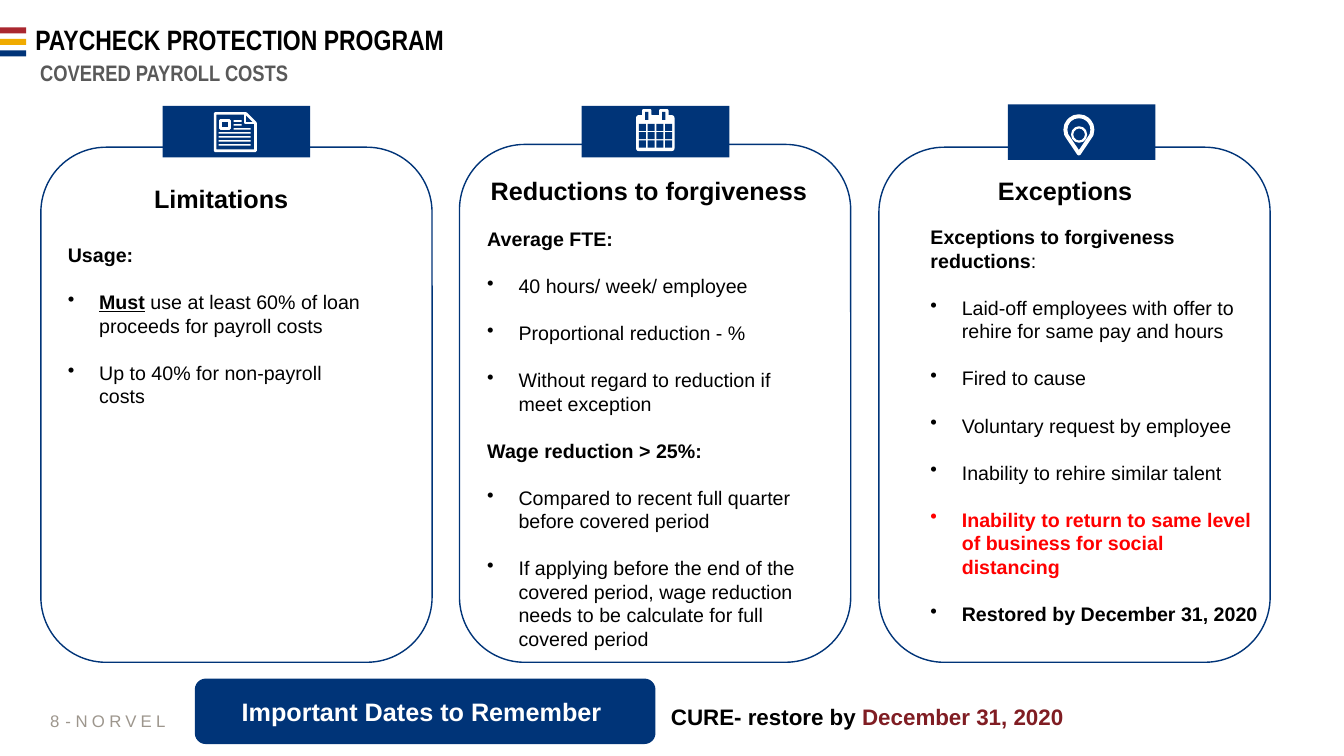
import dataclasses
import math

import pptx
import pptx.dml.color
import pptx.enum.shapes
import pptx.enum.text
import pptx.util
from lxml import etree

Cm = pptx.util.Cm
Pt = pptx.util.Pt
Shape = pptx.enum.shapes.MSO_SHAPE
Align = pptx.enum.text.PP_ALIGN
Anchor = pptx.enum.text.MSO_ANCHOR
RGB = pptx.dml.color.RGBColor.from_string


@dataclasses.dataclass(frozen=True)
class Theme:
    navy: str = "003478"
    red: str = "AA272F"
    gold: str = "F0AB00"
    white: str = "FFFFFF"
    black: str = "000000"
    gray: str = "595959"
    footer: str = "9D968D"
    alert: str = "FF0000"
    maroon: str = "801D23"
    sans: str = "Arial"
    narrow: str = "Arial Narrow"
    title: float = 20
    heading: float = 18
    subtitle: float = 16
    body: float = 14
    small: float = 12
    body_line: float = 16.8


theme = Theme()
deck = pptx.Presentation()
deck.slide_width, deck.slide_height = Cm(33.87), Cm(19.05)
page = deck.slides.add_slide(deck.slide_layouts[6])


def draw(kind, left, top, width, height, fill=None, line=None, weight=1):
    shape = page.shapes.add_shape(kind, Cm(left), Cm(top), Cm(width), Cm(height))
    shape.shadow.inherit = False
    if fill:
        shape.fill.solid()
        shape.fill.fore_color.rgb = RGB(fill)
    else:
        shape.fill.background()
    if line:
        shape.line.color.rgb = RGB(line)
        shape.line.width = Pt(weight)
    else:
        shape.line.fill.background()
    return shape


def write(paragraph, spans, size, color=theme.black, bold=True, name=theme.sans, align=Align.LEFT):
    paragraph.alignment = align
    paragraph.font.name = name
    paragraph.font.size = Pt(size)
    paragraph.font.bold = bold
    paragraph.font.color.rgb = RGB(color)
    for text, style in spans:
        span = paragraph.add_run()
        span.text = text
        for key, value in style.items():
            if key == "color":
                span.font.color.rgb = RGB(value)
            elif key == "spacing":
                span.font._element.set("spc", str(value * 100))
            else:
                setattr(span.font, key, value)


for index, color in enumerate((theme.red, theme.gold, theme.navy)):
    draw(Shape.RECTANGLE, 0, 0.69 + 0.29 * index, 0.66, 0.15, color)

for left, top, height in ((1.03, 3.71, 12.98), (11.58, 3.64, 13.05), (22.15, 3.71, 12.98)):
    draw(Shape.ROUNDED_RECTANGLE, left, top, 9.86, height, line=theme.navy)
for left, top, height in ((4.1, 2.67, 1.3), (14.66, 2.67, 1.3), (25.4, 2.63, 1.4)):
    draw(Shape.RECTANGLE, left, top, 3.72, height, theme.navy)

draw(Shape.ROUNDED_RECTANGLE, 16.03, 2.9, 0.97, 0.91, theme.white).adjustments[0] = 0.08
for row in range(3):
    for column in range(4):
        draw(Shape.RECTANGLE, 16.1 + 0.22 * column, 3.12 + 0.21 * row, 0.18, 0.18, theme.navy)
for left in (16.18, 16.61):
    draw(Shape.ROUNDED_RECTANGLE, left, 2.75, 0.24, 0.33, theme.white)
    draw(Shape.RECTANGLE, left + 0.08, 2.82, 0.08, 0.2, theme.navy)

pin_x, pin_y, pin_radius = 27.19, 3.27, 0.34
pin = [(pin_x, 3.87)]
for degrees in range(150, 391, 10):
    angle = math.radians(degrees)
    pin.append((pin_x + pin_radius * math.cos(angle), pin_y + pin_radius * math.sin(angle)))
outlines = (
    (pin, True, 2.8),
    ([(5.42, 2.86), (6.2, 2.86), (6.44, 3.1), (6.44, 3.8), (5.42, 3.8)], True, 1.8),
    ([(6.17, 2.86), (6.17, 3.1), (6.44, 3.1)], False, 1.5),
)
for points, closed, weight in outlines:
    steps = [(round(x * 100), round(y * 100)) for x, y in points]
    builder = page.shapes.build_freeform(*steps[0], scale=Cm(0.01))
    builder.add_line_segments(steps[1:], close=closed)
    outline = builder.convert_to_shape()
    outline.shadow.inherit = False
    outline.fill.background()
    outline.line.color.rgb = RGB(theme.white)
    outline.line.width = Pt(weight)
draw(Shape.OVAL, 27.02, 3.21, 0.35, 0.36, line=theme.white, weight=1.6)

draw(Shape.RECTANGLE, 5.55, 3.03, 0.23, 0.21, line=theme.white, weight=2)
for left, top, width in ((5.89, 3.03, 0.2), (5.89, 3.13, 0.2), (5.89, 3.23, 0.43)):
    draw(Shape.RECTANGLE, left, top, width, 0.04, theme.white)
for row in range(4):
    draw(Shape.RECTANGLE, 5.51, 3.33 + 0.1 * row, 0.81, 0.04, theme.white)

centered = {"align": Align.CENTER}
subtitle = {"color": theme.gray, "name": theme.narrow, "align": Align.CENTER}
footer = {"color": theme.footer, "bold": False}
labels = (
    (0.64, 0.5, 32.61, 0.99, theme.title, [("PAYCHECK PROTECTION PROGRAM", {})], {"name": theme.narrow}),
    (0.23, 1.35, 7.82, 0.94, theme.subtitle, [("COVERED PAYROLL COSTS", {})], subtitle),
    (1.13, 4.5, 8.89, 1.02, theme.heading, [("Limitations", {})], centered),
    (11.91, 4.29, 8.89, 1.02, theme.heading, [("Reductions to forgiveness", {})], centered),
    (22.4, 4.29, 8.89, 1.02, theme.heading, [("Exceptions", {})], centered),
    (0.91, 17.65, 0.94, 1.02, theme.small, [("8", {})], {**footer, "align": Align.CENTER}),
    (1.4, 17.65, 3.4, 1.02, theme.small, [("- ", {}), ("NORVEL", {"spacing": 3})], footer),
    (16.66, 17.47, 11.96, 1.18, theme.subtitle,
     [("CURE- restore by ", {}), ("December 31, 2020", {"color": theme.maroon})], {}),
)
for left, top, width, height, size, spans, options in labels:
    box = page.shapes.add_textbox(Cm(left), Cm(top), Cm(width), Cm(height))
    box.text_frame.word_wrap = True
    box.text_frame.vertical_anchor = Anchor.MIDDLE
    write(box.text_frame.paragraphs[0], spans, size, **options)

button = draw(Shape.ROUNDED_RECTANGLE, 4.91, 17.1, 11.61, 1.65, theme.navy)
button.text_frame.vertical_anchor = Anchor.MIDDLE
write(button.text_frame.paragraphs[0], [("Important Dates to Remember ", {})],
      theme.heading, theme.white, align=Align.CENTER)

plain = {"bold": False}
columns = (
    (1.46, 6, 8.1, 6.83, (
        (False, [("Usage:", {})]),
        (True, [("Must", {"underline": True}),
                (" use at least 60% of loan proceeds for payroll costs", plain)]),
        (True, [("Up to 40% for non-payroll costs", plain)]),
    )),
    (12.03, 5.59, 8.53, 11.02, (
        (False, [("Average FTE:", {})]),
        (True, [("40 hours/ week/ employee", plain)]),
        (True, [("Proportional reduction - %", plain)]),
        (True, [("Without regard to reduction if meet exception", plain)]),
        (False, [("Wage reduction > 25%:", {})]),
        (True, [("Compared to recent full quarter before covered period", plain)]),
        (True, [("If applying before the end of the covered period, wage reduction "
                 "needs to be calculate for full covered period", plain)]),
    )),
    (23.2, 5.55, 8.79, 10.44, (
        (False, [("Exceptions to forgiveness reductions", {}), (":", plain)]),
        (True, [("Laid-off employees with offer to rehire for same pay and hours", plain)]),
        (True, [("Fired to cause", plain)]),
        (True, [("Voluntary request by employee", plain)]),
        (True, [("Inability to rehire similar talent", plain)]),
        (True, [("Inability to return to same level of business for social distancing",
                 {"color": theme.alert})]),
        (True, [("Restored by December 31, 2020", {})]),
    )),
)
for left, top, width, height, items in columns:
    box = page.shapes.add_textbox(Cm(left), Cm(top), Cm(width), Cm(height))
    frame = box.text_frame
    frame.word_wrap = True
    for index, (bulleted, spans) in enumerate(items):
        para = frame.add_paragraph() if index else frame.paragraphs[0]
        para.line_spacing = Pt(theme.body_line)
        if index:
            para.space_before = Pt(theme.body_line)
        if bulleted:
            properties = para._p.get_or_add_pPr()
            properties.set("marL", str(Cm(0.79)))
            properties.set("indent", str(-Cm(0.79)))
            bullet = etree.SubElement(properties, pptx.oxml.ns.qn("a:buChar"))
            bullet.set("char", "•")
        write(para, spans, theme.body)

deck.save("out.pptx")
